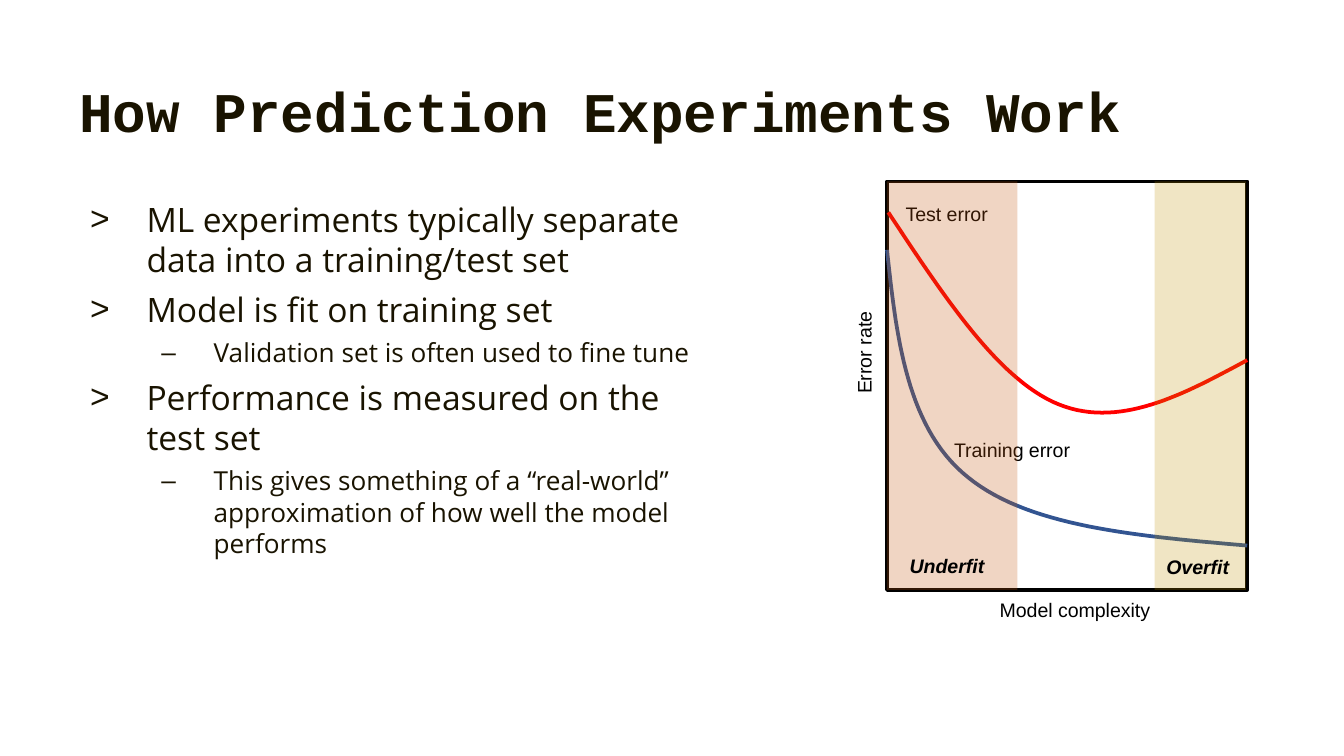
from lxml.etree import SubElement
from pptx import Presentation
from pptx.dml.color import RGBColor
from pptx.enum.shapes import MSO_SHAPE
from pptx.enum.text import MSO_ANCHOR, MSO_AUTO_SIZE, PP_ALIGN
from pptx.oxml.ns import qn
from pptx.util import Inches, Pt

INK = RGBColor(0x19, 0x13, 0x00)
BLACK = RGBColor(0x00, 0x00, 0x00)
WHITE = RGBColor(0xFF, 0xFF, 0xFF)
BLUE = RGBColor(0x32, 0x54, 0x91)
RED = RGBColor(0xFF, 0x00, 0x00)
RUST = RGBColor(0xC5, 0x5A, 0x11)
GOLD = RGBColor(0xBF, 0x90, 0x00)

# Per list level: bullet, left indent, hanging indent, space before, text size
LEVELS = [(">", 0.5, 0.42, 4.8, 18), ("–", 1, 0.39, 4, 14)]
CURVE_STEPS = 30


class SlideBuilder:
    """Holds the current slide and its shared text style."""

    title_font, body_font, label_font = "Courier New", "Open Sans", "Arial"
    label_size = 10.5

    def __init__(self, page):
        self.page = page

    def place(self, shape, left, top, width, height):
        shape.left, shape.top = Inches(left), Inches(top)
        shape.width, shape.height = Inches(width), Inches(height)

    def style(self, para, name, size, color, bold=False, italic=False):
        font = para.font
        font.name, font.size = name, Pt(size)
        font.bold, font.italic = bold, italic
        font.color.rgb = color

    def title(self, text, *bounds):
        shape = self.page.shapes.title
        self.place(shape, *bounds)
        frame = shape.text_frame
        frame.text = text
        frame.auto_size = MSO_AUTO_SIZE.NONE
        frame.vertical_anchor = MSO_ANCHOR.BOTTOM
        para = frame.paragraphs[0]
        para.alignment = PP_ALIGN.LEFT
        self.style(para, self.title_font, 30, INK, bold=True)

    def bullets(self, items, *bounds):
        shape = self.page.placeholders[1]
        self.place(shape, *bounds)
        frame = shape.text_frame
        frame.auto_size = MSO_AUTO_SIZE.NONE
        for index, (level, text) in enumerate(items):
            para = frame.add_paragraph() if index else frame.paragraphs[0]
            para.text, para.level = text, level
            mark, indent, hanging, before, size = LEVELS[level]
            properties = para._p.get_or_add_pPr()
            properties.set("marL", str(Inches(indent)))
            properties.set("indent", str(-Inches(hanging)))
            bullet_color = SubElement(properties, qn("a:buClr"))
            SubElement(bullet_color, qn("a:srgbClr"), val=str(INK))
            SubElement(properties, qn("a:buFont"), typeface=self.label_font)
            SubElement(properties, qn("a:buChar"), char=mark)
            para.line_spacing = 1.0
            para.space_before = Pt(before if index else 0)
            self.style(para, self.body_font, size, INK)

    def rectangle(self, fill, *bounds, line=None, opacity=None):
        shape = self.page.shapes.add_shape(
            MSO_SHAPE.RECTANGLE, *(Inches(value) for value in bounds))
        shape.shadow.inherit = False
        shape.fill.solid()
        shape.fill.fore_color.rgb = fill
        if opacity is not None:
            color = shape._element.spPr.find(".//" + qn("a:srgbClr"))
            SubElement(color, qn("a:alpha"), val=str(opacity * 1000))
        if line is None:
            shape.line.fill.background()
        else:
            shape.line.color.rgb = line
            shape.line.width = Pt(2)

    def curve(self, color, points):
        """Draw a chain of cubic Bezier segments that share their end points."""
        trace = [points[0]]
        for first in range(0, len(points) - 1, 3):
            segment = points[first:first + 4]
            for step in range(1, CURVE_STEPS + 1):
                t = step / CURVE_STEPS
                weights = ((1 - t) ** 3, 3 * t * (1 - t) ** 2,
                           3 * t ** 2 * (1 - t), t ** 3)
                trace.append([sum(w * value for w, value in zip(weights, axis))
                              for axis in zip(*segment)])
        start, *rest = [(Inches(x), Inches(y)) for x, y in trace]
        builder = self.page.shapes.build_freeform(*start)
        builder.add_line_segments(rest, close=False)
        shape = builder.convert_to_shape()
        shape.shadow.inherit = False
        shape.fill.background()
        shape.line.color.rgb = color
        shape.line.width = Pt(2)

    def label(self, text, left, top, width=2.08, rotation=0, strong=False):
        box = self.page.shapes.add_textbox(
            Inches(left), Inches(top), Inches(width), Inches(0.28))
        box.rotation = rotation
        frame = box.text_frame
        frame.word_wrap = True
        frame.auto_size = MSO_AUTO_SIZE.SHAPE_TO_FIT_TEXT
        frame.text = text
        self.style(frame.paragraphs[0], self.label_font, self.label_size,
                   BLACK, bold=strong, italic=strong)


def main():
    deck = Presentation()
    deck.slide_width = Inches(10)
    deck.slide_height = deck.slide_width * 9 // 16
    slide = SlideBuilder(deck.slides.add_slide(deck.slide_layouts[1]))

    # Title and list
    slide.title("How Prediction Experiments Work", 0.49, 0.03, 8.96, 1.09)
    slide.bullets([
        (0, "ML experiments typically separate data into a training/test set"),
        (0, "Model is fit on training set"),
        (1, "Validation set is often used to fine tune"),
        (0, "Performance is measured on the test set"),
        (1, "This gives something of a “real-world” approximation of how well "
            "the model performs"),
    ], 0.49, 1.43, 4.78, 2.59)

    # Plot frame and error curves
    left, top, width, height = 6.6, 1.35, 2.68, 3.04
    slide.rectangle(WHITE, left, top, width, height, line=BLACK)
    slide.curve(BLUE, [(6.6, 1.86), (6.67, 2.52), (6.75, 3.19), (7.2, 3.55),
                       (7.65, 3.92), (8.46, 3.99), (9.28, 4.06)])
    slide.curve(RED, [(6.61, 1.58), (7.02, 2.2), (7.43, 2.83), (7.88, 3.01),
                      (8.33, 3.19), (8.8, 2.94), (9.28, 2.68)])

    # Axis and curve labels
    slide.label("Model complexity", 7.34, 4.4)
    slide.label("Test error", 6.64, 1.45)
    slide.label("Training error", 7, 3.21)
    slide.label("Error rate", 5.39, 1.85, rotation=270)

    # Underfit and overfit zones
    slide.rectangle(RUST, left, top, 0.97, height, opacity=25)
    slide.rectangle(GOLD, 8.59, top, 0.68, height, opacity=23)
    slide.label("Underfit", 6.67, 4.07, strong=True)
    slide.label("Overfit", 8.58, 4.08, width=0.87, strong=True)

    deck.save("out.pptx")


if __name__ == "__main__":
    main()
